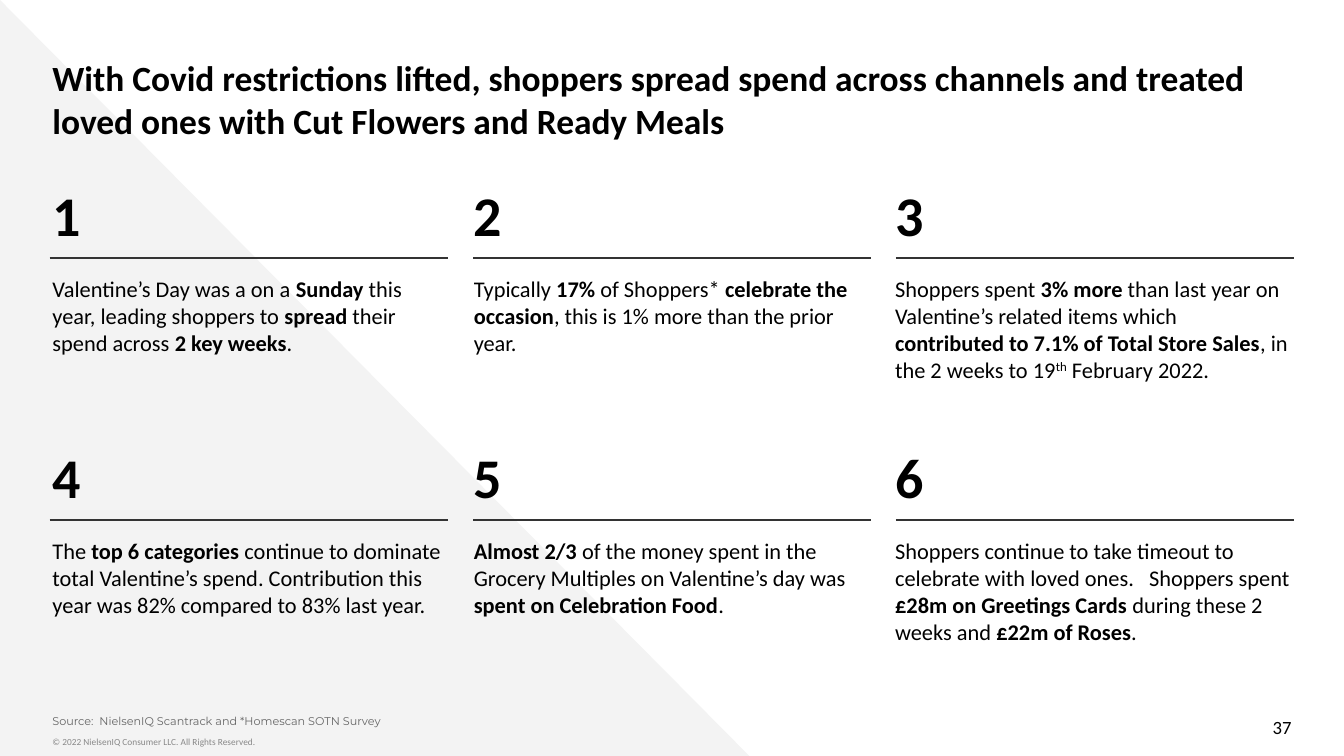
from lxml.etree import SubElement
from pptx import Presentation
from pptx.dml.color import RGBColor
from pptx.enum.shapes import MSO_CONNECTOR, MSO_SHAPE
from pptx.enum.text import MSO_ANCHOR, MSO_AUTO_SIZE, PP_ALIGN
from pptx.oxml.ns import qn
from pptx.util import Pt

PX = 4572  # EMU per px, 200 px to the inch


def color(value):
    return RGBColor.from_string(value)


def write(shape, box, text, size, hex_color="000000", bold=False, font="Calibri",
          inset=(10, 10), anchor=MSO_ANCHOR.TOP, align=PP_ALIGN.LEFT):
    """Place a shape and fill it: |text| toggles bold, ^text^ is superscript."""
    for name, value in zip(("left", "top", "width", "height"), box):
        setattr(shape, name, value * PX)
    frame = shape.text_frame
    frame_format = {
        "word_wrap": True, "auto_size": MSO_AUTO_SIZE.NONE, "vertical_anchor": anchor,
        "margin_left": 0, "margin_right": 0,
        "margin_top": inset[0] * PX, "margin_bottom": inset[1] * PX,
    }
    for name, value in frame_format.items():
        setattr(frame, name, value)
    paragraph = frame.paragraphs[0]
    paragraph.alignment = align
    for i, weight_part in enumerate(text.split("|")):
        for j, part in enumerate(weight_part.split("^")):
            if not part:
                continue
            run = paragraph.add_run()
            run.text = part
            run_format = {"name": font, "size": Pt(size), "bold": bold or i % 2 == 1}
            for name, value in run_format.items():
                setattr(run.font, name, value)
            run.font.color.rgb = color(hex_color)
            if j % 2:
                run.font._element.set("baseline", "30000")


presentation = Presentation()
presentation.slide_width = 2000 * PX
presentation.slide_height = 1125 * PX
slide = presentation.slides.add_slide(presentation.slide_layouts[5])
shapes = slide.shapes

# Background triangle, sent behind the title
triangle = shapes.add_shape(MSO_SHAPE.RIGHT_TRIANGLE, 0, 0, 1118 * PX, 1128 * PX)
triangle.shadow.inherit = False
triangle.fill.solid()
triangle.fill.fore_color.rgb = color("F3F3F3")
triangle.line.fill.background()
shapes._spTree.insert(2, triangle._element)

write(shapes.title, (78, 64, 1844, 86),
      "With Covid restrictions lifted, shoppers spread spend across channels "
      "and treated loved ones with Cut Flowers and Ready Meals",
      19, bold=True, inset=(20, 20))

# Six numbered findings, three to a row
findings = [
    "Valentine’s Day was a on a |Sunday| this year, leading shoppers to |spread| "
    "their spend across |2 key weeks|.",
    "Typically |17%| of Shoppers* |celebrate the occasion|, this is 1% more than "
    "the prior year.",
    "Shoppers spent |3% more |than last year on Valentine’s related items which "
    "|contributed to 7.1% of Total Store Sales|, in the 2 weeks to 19^th^ February 2022.",
    "The |top 6 categories |continue to dominate total Valentine’s spend. "
    "Contribution this year was 82% compared to 83% last year.",
    "|Almost 2/3 |of the money spent in the Grocery Multiples on Valentine’s day was "
    "|spent on Celebration Food|.",
    "Shoppers continue to take timeout to celebrate with loved ones.   Shoppers spent "
    "|£28m on Greetings Cards |during these 2 weeks and |£22m of Roses|.",
]
text_lefts = [78, 705, 1332]
rule_lefts = [74, 704, 1333]
for index, finding in enumerate(findings):
    row, column = divmod(index, 3)
    left, top = text_lefts[column], 269 + row * 390
    write(shapes.add_textbox(0, 0, 0, 0), (left, top, 340, 116), str(index + 1), 30,
          bold=True, inset=(0, 10))
    rule_left, rule_top = rule_lefts[column] * PX, (top + 115) * PX
    rule = shapes.add_connector(MSO_CONNECTOR.STRAIGHT, rule_left, rule_top,
                                rule_left + 592 * PX, rule_top)
    rule.line.color.rgb = color("333333")
    rule.line.width = Pt(0.75)
    SubElement(rule._element.spPr, qn("a:effectLst"))
    write(shapes.add_textbox(0, 0, 0, 0), (left, top + 131, 590, 258), finding, 12)

# Footer
write(shapes.add_textbox(0, 0, 0, 0), (78, 1063, 1784, 40),
      "Source:  NielsenIQ Scantrack and *Homescan SOTN Survey", 6, "666666",
      font="Montserrat", inset=(20, 20), anchor=MSO_ANCHOR.BOTTOM)
write(shapes.add_textbox(0, 0, 0, 0), (78, 1086, 1108, 40),
      "© 2022 NielsenIQ Consumer LLC. All Rights Reserved.", 5, "888888")
write(shapes.add_textbox(0, 0, 0, 0), (1472, 1052, 450, 60), "37", 10,
      anchor=MSO_ANCHOR.MIDDLE, align=PP_ALIGN.RIGHT)

presentation.save("out.pptx")
